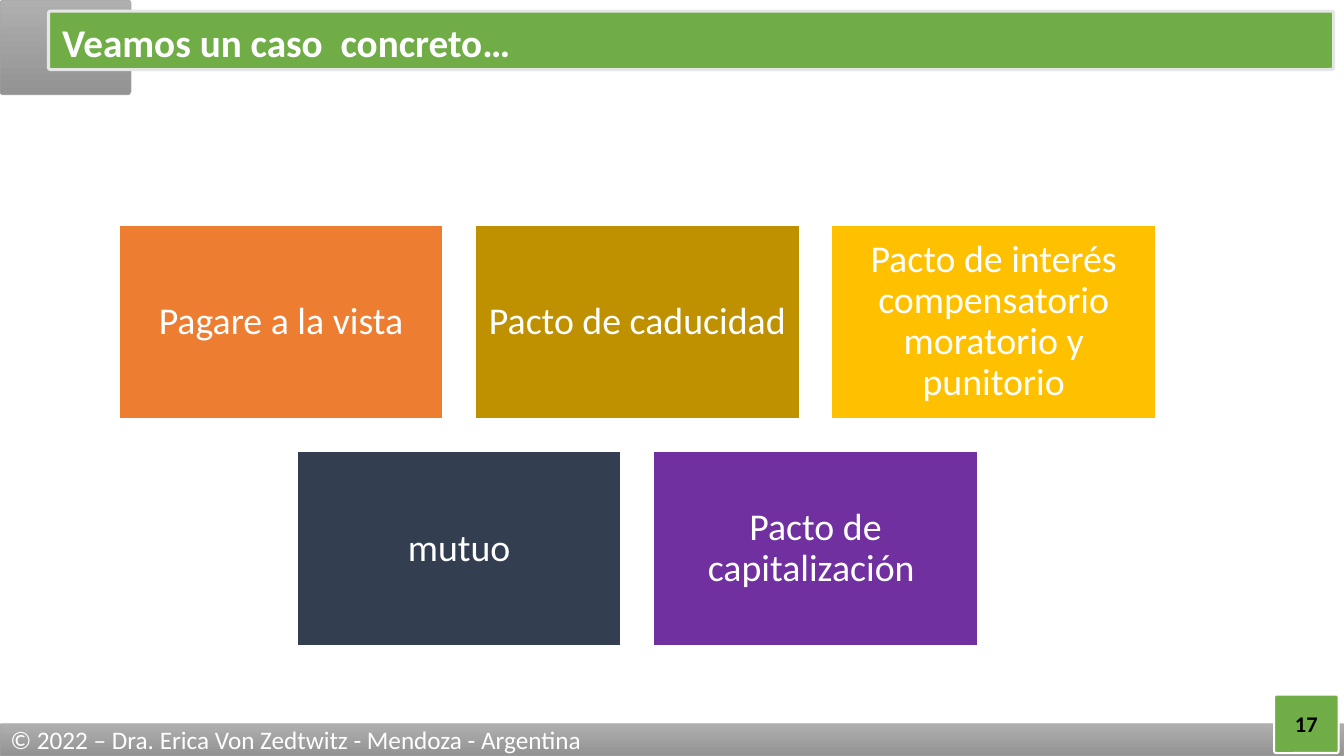
from dataclasses import dataclass

from pptx import Presentation
from pptx.dml.color import RGBColor
from pptx.enum.shapes import MSO_SHAPE
from pptx.enum.text import MSO_ANCHOR, PP_ALIGN
from pptx.util import Pt


@dataclass(frozen=True)
class Theme:
    """Colours and type sizes of the slide."""
    font: str = "Calibri"
    green: str = "70AD47"
    grey: str = "A5A5A5"
    grey_light: str = "AFAFAF"
    grey_dark: str = "939393"
    pale: str = "E7E6E6"
    white: str = "FFFFFF"
    black: str = "000000"
    orange: str = "ED7D31"
    ochre: str = "BF9000"
    yellow: str = "FFC000"
    navy: str = "333F50"
    purple: str = "7030A0"
    title_size: float = 28
    card_size: float = 27
    footer_size: float = 18
    number_size: float = 16


THEME = Theme()
ROUNDING = 0.038
WIDTH, HEIGHT = 960, 540
CARD_ROWS = [
    [("Pagare a la vista", THEME.orange),
     ("Pacto de caducidad", THEME.ochre),
     ("Pacto de interés compensatorio moratorio y punitorio", THEME.yellow)],
    [("mutuo", THEME.navy),
     ("Pacto de capitalización ", THEME.purple)],
]


def apply_format(target, values):
    """Set each attribute of the target from a dict of format values."""
    for attribute, value in values.items():
        setattr(target, attribute, value)


def write_text(holder, text, size, color, bold=False, align=PP_ALIGN.LEFT,
               spacing=1.0, inset=(7.2, 0)):
    """Write one vertically centred paragraph into a shape or text box."""
    frame = holder.text_frame
    across, down = (Pt(length) for length in inset)
    apply_format(frame, {
        "word_wrap": True, "vertical_anchor": MSO_ANCHOR.MIDDLE,
        "margin_left": across, "margin_right": across,
        "margin_top": down, "margin_bottom": down,
    })
    paragraph = frame.paragraphs[0]
    apply_format(paragraph, {"alignment": align, "line_spacing": spacing})
    run = paragraph.add_run()
    run.text = text
    apply_format(run.font, {"name": THEME.font, "size": Pt(size), "bold": bold})
    run.font.color.rgb = RGBColor.from_string(color)


def add_panel(slide, box, fill, line, line_width, rounded=True):
    """Draw a filled panel; a pair of fill colours makes a vertical gradient."""
    kind = MSO_SHAPE.ROUNDED_RECTANGLE if rounded else MSO_SHAPE.RECTANGLE
    panel = slide.shapes.add_shape(kind, *(Pt(length) for length in box))
    panel.shadow.inherit = False
    if rounded:
        panel.adjustments[0] = ROUNDING
    if isinstance(fill, tuple):
        panel.fill.gradient()
        panel.fill.gradient_angle = 270
        for stop, color in zip(panel.fill.gradient_stops, fill):
            stop.color.rgb = RGBColor.from_string(color)
    else:
        panel.fill.solid()
        panel.fill.fore_color.rgb = RGBColor.from_string(fill)
    panel.line.color.rgb = RGBColor.from_string(line)
    panel.line.width = Pt(line_width)
    return panel


def add_header(slide, box):
    """Place the grey corner, the green band and the title."""
    left, top, width, height = box
    greys = (THEME.grey_light, THEME.grey_dark)
    add_panel(slide, (left, top, 93.6, height), greys, THEME.grey, 0.5)
    add_panel(slide, (left + 34.6, top + 7.9, width - 42, 41.8),
              THEME.green, THEME.pale, 2.25)
    title = slide.shapes.add_textbox(
        Pt(left + 37.4), Pt(top + 14.4), Pt(width - 45.6), Pt(35.3))
    write_text(title, "Veamos un caso  concreto…", THEME.title_size,
               THEME.white, bold=True, spacing=0.9)


def add_footer(slide, box):
    """Place the grey credit bar and the page number that overlaps it."""
    left, top, width, height = box
    greys = (THEME.grey_light, THEME.grey_dark)
    bar = add_panel(slide, box, greys, THEME.grey, 0.5)
    write_text(bar, "© 2022 – Dra. Erica Von Zedtwitz - Mendoza - Argentina",
               THEME.footer_size, THEME.white)
    number = add_panel(slide, (left + width - 49.9, top - 20.9, 46.1, 41.8),
                       THEME.green, THEME.white, 1.5)
    write_text(number, "17", THEME.number_size, THEME.black, bold=True,
               align=PP_ALIGN.CENTER)


def add_cards(slide, box, rows):
    """Lay out centred rows of cards, with gaps of a tenth of a card."""
    left, top, width = box
    columns = max(len(row) for row in rows)
    card_width = width / (columns + 0.1 * (columns - 1))
    card_height = 0.6 * card_width
    gap = 0.1 * card_width
    for row_index, row in enumerate(rows):
        indent = (columns - len(row)) * (card_width + gap) / 2
        for column, (label, color) in enumerate(row):
            place = (left + indent + column * (card_width + gap),
                     top + row_index * (card_height + gap),
                     card_width, card_height)
            card = add_panel(slide, place, color, THEME.white, 1, rounded=False)
            write_text(card, label, THEME.card_size, THEME.white,
                       align=PP_ALIGN.CENTER, spacing=0.9, inset=(7.6, 7.6))


def main():
    """Build the slide and save it."""
    deck = Presentation()
    apply_format(deck, {"slide_width": Pt(WIDTH), "slide_height": Pt(HEIGHT)})
    slide = deck.slides.add_slide(deck.slide_layouts[6])
    add_header(slide, (0, 0, WIDTH, 67.7))
    add_footer(slide, (0, 517, WIDTH, 23))
    add_cards(slide, (85, 160.6, 740.5), CARD_ROWS)
    deck.save("out.pptx")


if __name__ == "__main__":
    main()
